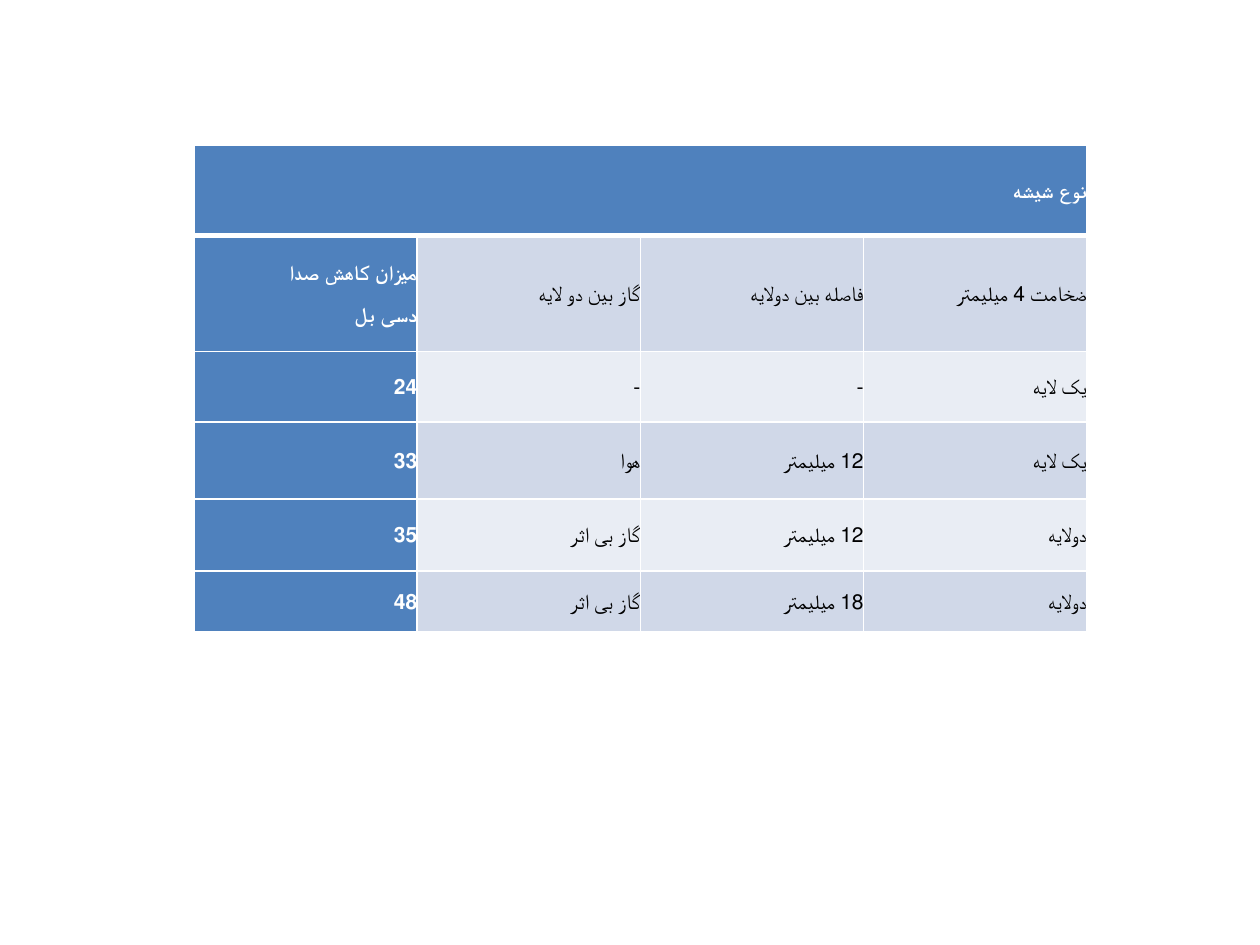
from lxml.etree import SubElement
from pptx import Presentation
from pptx.dml.color import RGBColor
from pptx.enum.text import MSO_ANCHOR, PP_ALIGN
from pptx.oxml.ns import qn
from pptx.util import Cm, Pt

COLORS = {
    "header": "4F81BD",
    "band_dark": "D0D8E8",
    "band_light": "E9EDF4",
    "white": "FFFFFF",
    "black": "000000",
}
ROWS = [
    ["نوع شیشه", "", "", ""],
    ["میزان کاهش صدا\nدسی بل", "گاز بین دو لایه", "فاصله بین دولایه", "ضخامت 4 میلیمتر"],
    ["24", "-", "-", "یک لایه"],
    ["33", "هوا", "12 میلیمتر", "یک لایه"],
    ["35", "گاز بی اثر", "12 میلیمتر", "دولایه"],
    ["48", "گاز بی اثر", "18 میلیمتر", "دولایه"],
]
ROW_HEIGHTS = [Cm(1.83), Cm(2.34), Cm(1.42), Cm(1.55), Cm(1.45), Cm(1.22)]
COLUMN_WIDTH = Cm(4.5)
CELL_FORMAT = {
    "vertical_anchor": MSO_ANCHOR.MIDDLE,
    "margin_left": 0,
    "margin_top": 0,
    "margin_right": 0,
    "margin_bottom": 0,
}
PARAGRAPH_FORMAT = {
    "alignment": PP_ALIGN.RIGHT,
    "line_spacing": 1.15,
    "space_after": Pt(10),
}
FONT_FORMAT = {"name": "Calibri", "size": Pt(12)}


def apply_format(target, values):
    """Set each named attribute on the target."""
    for name, value in values.items():
        setattr(target, name, value)


def set_borders(cell, widths):
    """Draw white borders of the given widths in points."""
    properties = cell._tc.get_or_add_tcPr()
    for side, width in widths.items():
        line = SubElement(properties, qn(f"a:ln{side}"), w=str(Pt(width)))
        fill = SubElement(line, qn("a:solidFill"))
        SubElement(fill, qn("a:srgbClr"), val=COLORS["white"])


def write_cell(cell, text, font_color, bold):
    """Write right-to-left paragraphs into a cell."""
    cell.text = text
    for paragraph in cell.text_frame.paragraphs:
        apply_format(paragraph, PARAGRAPH_FORMAT)
        paragraph._p.get_or_add_pPr().set("rtl", "1")
        for run in paragraph.runs:
            apply_format(run.font, FONT_FORMAT)
            run.font.bold = bold
            run.font.color.rgb = RGBColor.from_string(COLORS[font_color])


def format_cell(cell, row, column):
    """Give a cell its anchor, margins, borders and fill."""
    apply_format(cell, CELL_FORMAT)
    top = 3 if row == 1 else 1
    bottom = 3 if row == 0 else 1
    set_borders(cell, {"L": 1, "R": 1, "T": top, "B": bottom})
    band = "band_dark" if row % 2 else "band_light"
    fill_color = "header" if row == 0 or column == 0 else band
    cell.fill.solid()
    cell.fill.fore_color.rgb = RGBColor.from_string(COLORS[fill_color])


def add_glass_table(slide):
    """Add the table of glass types and sound reduction."""
    column_count = len(ROWS[0])
    table = slide.shapes.add_table(
        len(ROWS), column_count, Cm(3.91), Cm(2.92),
        COLUMN_WIDTH * column_count, sum(ROW_HEIGHTS),
    ).table
    table.first_col = True
    for column in table.columns:
        column.width = COLUMN_WIDTH
    for row, height in zip(table.rows, ROW_HEIGHTS):
        row.height = height
    table.cell(0, 0).merge(table.cell(0, column_count - 1))
    for row, texts in enumerate(ROWS):
        for column, text in enumerate(texts):
            cell = table.cell(row, column)
            is_header = row == 0 or column == 0
            format_cell(cell, row, column)
            write_cell(cell, text, "white" if is_header else "black", is_header)


def main():
    """Build and save the presentation."""
    presentation = Presentation()
    presentation.slide_width = Cm(25.4)
    presentation.slide_height = Cm(19.05)
    slide = presentation.slides.add_slide(presentation.slide_layouts[6])
    add_glass_table(slide)
    presentation.save("out.pptx")


if __name__ == "__main__":
    main()
